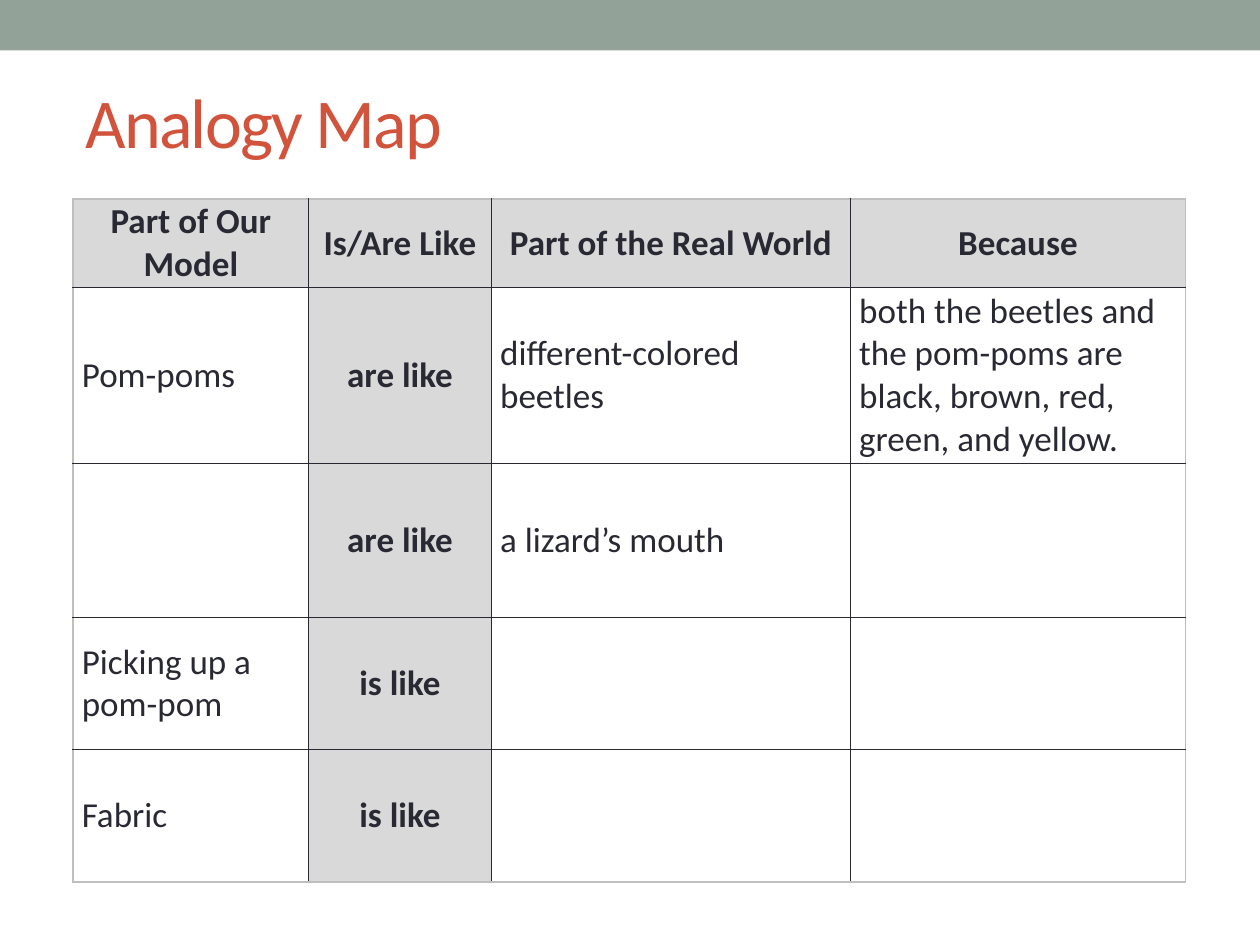
from dataclasses import dataclass

from lxml import etree
from pptx import Presentation
from pptx.dml.color import RGBColor
from pptx.enum import shapes, text
from pptx.oxml import ns
from pptx.util import Inches, Pt


@dataclass(frozen=True)
class Theme:
    font: str = "Calibri"
    title_size: float = 40
    body_size: float = 20
    band: str = "93A299"
    title: str = "D2533C"
    ink: str = "292934"
    shade: str = "D9D9D9"
    frame: str = "BFBFBF"
    rule_width: float = 1


@dataclass(frozen=True)
class Analogy:
    model: str
    link: str
    world: str
    because: str

    def texts(self) -> tuple[str, ...]:
        return self.model, self.link, self.world, self.because


THEME = Theme()
HEADINGS = Analogy("Part of Our Model", "Is/Are Like", "Part of the Real World", "Because")
ANALOGIES = [
    Analogy("Pom-poms", "are like", "different-colored beetles",
            "both the beetles and the pom-poms are black, brown, red, green, and yellow."),
    Analogy("", "are like", "a lizard’s mouth", ""),
    Analogy("Picking up a pom-pom", "is like", "", ""),
    Analogy("Fabric", "is like", "", ""),
]
COLUMN_WIDTHS = [1.87, 1.45, 2.85, 2.66]
ROW_HEIGHTS = [0.7, 1.4, 1.22, 1.05, 1.05]
LINK_COLUMN = 1


def add_run(paragraph, words: str, size: float, color: str, bold: bool = False):
    run = paragraph.add_run()
    run.text = words
    run.font.name = THEME.font
    run.font.size = Pt(size)
    run.font.bold = bold
    run.font.color.rgb = RGBColor.from_string(color)
    return run


def add_band(slide) -> None:
    band = slide.shapes.add_shape(shapes.MSO_SHAPE.RECTANGLE, 0, 0, Inches(10), Inches(0.4))
    band.shadow.inherit = False
    band.fill.solid()
    band.fill.fore_color.rgb = RGBColor.from_string(THEME.band)
    band.line.fill.background()


def add_title(slide, words: str) -> None:
    title = slide.shapes.add_textbox(Inches(0.58), Inches(0.42), Inches(8.92), Inches(1.08))
    frame = title.text_frame
    frame.word_wrap = True
    frame.vertical_anchor = text.MSO_ANCHOR.MIDDLE
    run = add_run(frame.paragraphs[0], words, THEME.title_size, THEME.title)
    run.font._element.set("spc", "-100")  # tighten letters by one point


def set_borders(cell, colors: dict[str, str]) -> None:
    """Add the side lines, which must come before the cell's fill."""
    properties = cell._tc.get_or_add_tcPr()
    for index, (side, color) in enumerate(colors.items()):
        line = etree.Element(ns.qn(f"a:ln{side}"), w=str(Pt(THEME.rule_width)))
        fill = etree.SubElement(line, ns.qn("a:solidFill"))
        etree.SubElement(fill, ns.qn("a:srgbClr"), val=color)
        properties.insert(index, line)


def fill_cell(cell, words: str, heading: bool) -> None:
    cell.margin_left = cell.margin_right = Inches(0.07)
    cell.margin_top = cell.margin_bottom = 0
    cell.vertical_anchor = text.MSO_ANCHOR.MIDDLE
    if heading:
        cell.fill.solid()
        cell.fill.fore_color.rgb = RGBColor.from_string(THEME.shade)
    else:
        cell.fill.background()
    if words:
        paragraph = cell.text_frame.paragraphs[0]
        paragraph.alignment = text.PP_ALIGN.CENTER if heading else text.PP_ALIGN.LEFT
        add_run(paragraph, words, THEME.body_size, THEME.ink, heading)


def add_analogy_table(slide, rows: list[Analogy]) -> None:
    last_row, last_column = len(rows) - 1, len(COLUMN_WIDTHS) - 1
    table = slide.shapes.add_table(
        len(rows), len(COLUMN_WIDTHS), Inches(0.58), Inches(1.58),
        Inches(sum(COLUMN_WIDTHS)), Inches(sum(ROW_HEIGHTS))).table
    table.first_row = table.horz_banding = False
    for column, width in zip(table.columns, COLUMN_WIDTHS):
        column.width = Inches(width)
    for row, height in zip(table.rows, ROW_HEIGHTS):
        row.height = Inches(height)

    for r, analogy in enumerate(rows):
        for c, words in enumerate(analogy.texts()):
            cell = table.cell(r, c)
            fill_cell(cell, words, heading=r == 0 or c == LINK_COLUMN)
            # Light lines around the table, dark lines inside it
            outer = {"L": c == 0, "R": c == last_column, "T": r == 0, "B": r == last_row}
            set_borders(cell, {side: THEME.frame if edge else THEME.ink
                               for side, edge in outer.items()})


def main() -> None:
    deck = Presentation()
    deck.slide_width, deck.slide_height = Inches(10), Inches(7.5)
    slide = deck.slides.add_slide(deck.slide_layouts[6])

    # Header
    add_band(slide)
    add_title(slide, "Analogy Map")

    # Analogies
    add_analogy_table(slide, [HEADINGS, *ANALOGIES])

    deck.save("out.pptx")


if __name__ == "__main__":
    main()
